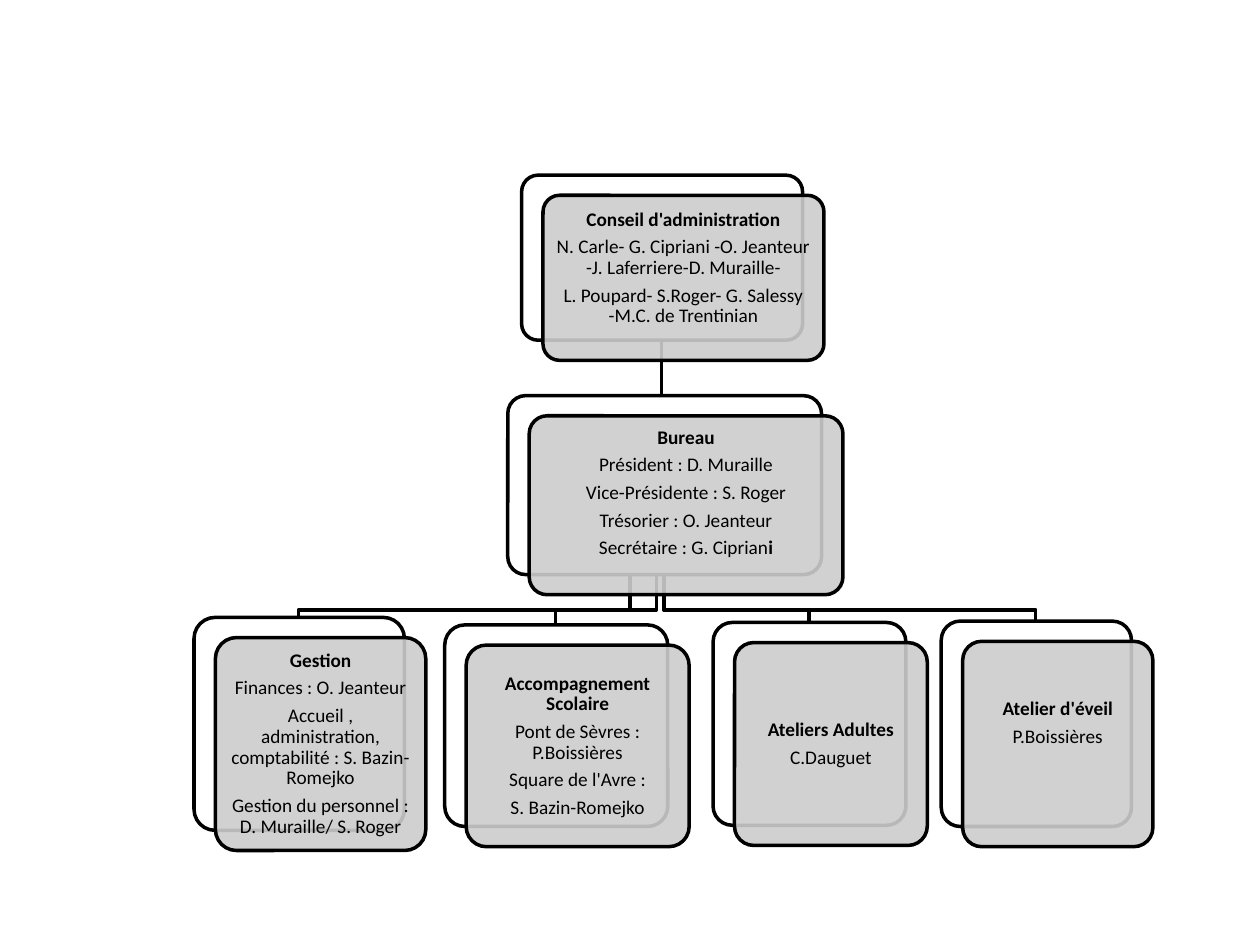
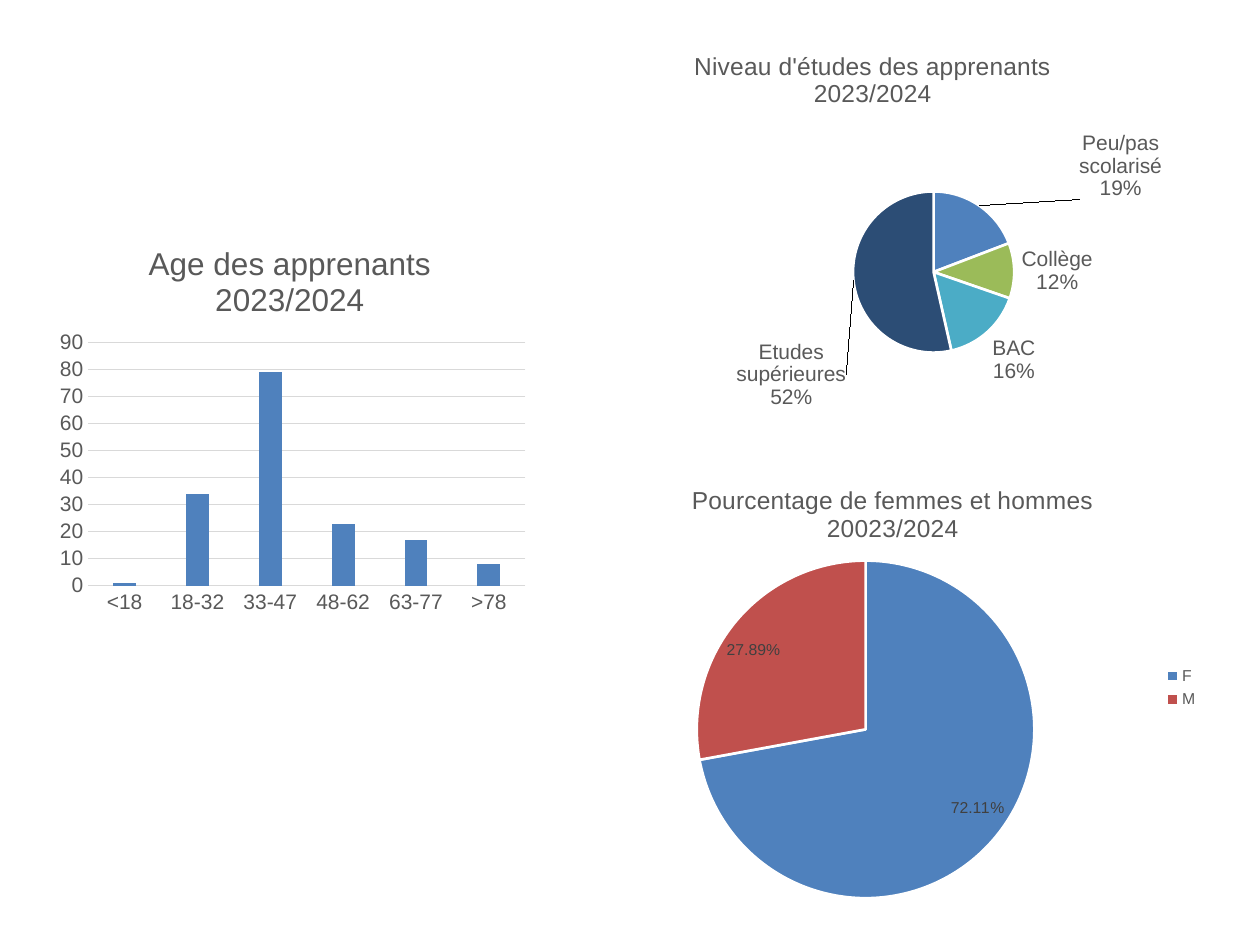
from lxml.etree import SubElement
from pptx import Presentation
from pptx.chart.data import CategoryChartData
from pptx.dml.color import RGBColor
from pptx.enum.chart import XL_CHART_TYPE, XL_LABEL_POSITION, XL_LEGEND_POSITION, XL_TICK_MARK
from pptx.enum.shapes import MSO_CONNECTOR, MSO_SHAPE
from pptx.enum.text import MSO_ANCHOR, PP_ALIGN
from pptx.oxml import parse_xml
from pptx.oxml.ns import nsdecls, qn
from pptx.util import Emu, Pt

SCALE = 9144  # EMU per px, 100 px to the inch
COLORS = {
    "black": "000000", "white": "FFFFFF", "card": "CCCCCC",
    "text": "595959", "label": "404040", "grid": "D9D9D9",
    "blue": "4F81BD", "green": "9BBB59", "teal": "4BACC6", "navy": "2C4D75", "red": "C0504D",
}
CARD_FONT, CHART_FONT = "Calibri", "Arial"

# Organisation chart: box of the back card, then the text of the front card.
# "tail" is the free room kept below the text.
BOARD = {"box": (414, 139, 223, 131), "tail": 15, "lines": [
    "Conseil d'administration",
    "N. Carle- G. Cipriani -O. Jeanteur -J. Laferriere-D. Muraille-",
    "L. Poupard- S.Roger- G. Salessy -M.C. de Trentinian"]}
OFFICE = {"box": (403, 314, 249, 142), "tail": 19, "lines": [
    "Bureau", "Président : D. Muraille", "Vice-Présidente : S. Roger",
    "Trésorier : O. Jeanteur", "Secrétaire : G. Ciprian"], "bold_end": "i"}
TEAMS = [
    {"box": (154, 490, 167, 169), "stem": 500, "lines": [
        "Gestion", "Finances : O. Jeanteur",
        "Accueil , administration, comptabilité : S. Bazin-Romejko",
        "Gestion du personnel : D. Muraille/ S. Roger"]},
    {"box": (353, 496, 177, 160), "stem": 521, "lines": [
        "Accompagnement Scolaire", "Pont de Sèvres : P.Boissières",
        "Square de l'Avre :", "S. Bazin-Romejko"]},
    {"box": (566, 494, 153, 161), "stem": 527, "lines": ["Ateliers Adultes", "C.Dauguet"]},
    {"box": (747, 493, 151, 163), "stem": 527, "tail": 33,
     "lines": ["Atelier d'éveil", "P.Boissières"]},
]
ELBOW_Y = 484
FRONT_OFFSET = (17, 16)
CARD_INSET = 5


def px(*values):
    return [Emu(value * SCALE) for value in values]


def color(name):
    return RGBColor.from_string(COLORS[name])


def set_font(font, size, name, family, bold=False):
    font.size, font.name, font.bold = Pt(size), family, bold
    font.color.rgb = color(name)


def set_line(line, name="black", width=2):
    line.color.rgb = color(name)
    line.width = Pt(width)


def add_card(slide, box, fill):
    shape = slide.shapes.add_shape(MSO_SHAPE.ROUNDED_RECTANGLE, *px(*box))
    shape.adjustments[0] = 0.1
    shape.shadow.inherit = False
    shape.fill.solid()
    shape.fill.fore_color.rgb = color(fill)
    set_line(shape.line)
    return shape


def add_unit(slide, unit):
    """Add a white back card and a translucent front card that holds the text."""
    left, top, width, height = unit["box"]
    add_card(slide, unit["box"], "white")
    front = add_card(slide, (left + FRONT_OFFSET[0], top + FRONT_OFFSET[1], width, height), "card")
    fill_color = front.fill._xPr.find(qn("a:solidFill"))[0]
    SubElement(fill_color, qn("a:alpha"), val="90000")

    frame = front.text_frame
    frame.word_wrap = True
    frame.vertical_anchor = MSO_ANCHOR.MIDDLE
    frame.margin_left = frame.margin_right = frame.margin_top = px(CARD_INSET)[0]
    frame.margin_bottom = px(CARD_INSET + unit.get("tail", 0))[0]
    for index, text in enumerate(unit["lines"]):
        paragraph = frame.add_paragraph() if index else frame.paragraphs[0]
        paragraph.alignment = PP_ALIGN.CENTER
        paragraph.line_spacing = 0.9
        paragraph.space_after = Pt(3.85)
        add_card_run(paragraph, text, bold=index == 0)
    if "bold_end" in unit:
        add_card_run(paragraph, unit["bold_end"], bold=True)


def add_card_run(paragraph, text, bold):
    run = paragraph.add_run()
    run.text = text
    set_font(run.font, 11, "black", CARD_FONT, bold)


def add_branch(slide, team):
    """Add the elbow line from the office card to the top of a team card."""
    left, top, width, _ = team["box"]
    _, office_top, _, office_height = OFFICE["box"]
    end_x = left + width // 2
    builder = slide.shapes.build_freeform(team["stem"], office_top + office_height, scale=SCALE)
    builder.add_line_segments(
        [(team["stem"], ELBOW_Y), (end_x, ELBOW_Y), (end_x, top)], close=False)
    branch = builder.convert_to_shape()
    branch.shadow.inherit = False
    branch.fill.background()
    set_line(branch.line)


def add_trunk(slide):
    """Add the straight line from the board to the office."""
    left, top, width, height = BOARD["box"]
    middle = left + width // 2
    trunk = slide.shapes.add_connector(
        MSO_CONNECTOR.STRAIGHT, *px(middle, top + height, middle, OFFICE["box"][1]))
    SubElement(trunk._element.spPr, qn("a:effectLst"))
    set_line(trunk.line)
    trunk._element.spPr.append(trunk._element.spPr.find(qn("a:effectLst")))


def build_organisation_slide(slide):
    for team in reversed(TEAMS):
        add_branch(slide, team)
    add_trunk(slide)
    for unit in [BOARD, OFFICE, *TEAMS]:
        add_unit(slide, unit)


def set_layout(parent, index, inner=False, **fractions):
    """Put a manual layout at the given place among the children of a chart part."""
    for layout in parent.findall(qn("c:layout")):
        parent.remove(layout)
    target = '<c:layoutTarget val="inner"/>' if inner else ""
    modes = ""
    if parent.tag != qn("c:dLbl"):
        modes = '<c:xMode val="edge"/><c:yMode val="edge"/>'
    values = "".join(f'<c:{key} val="{value:.4f}"/>' for key, value in fractions.items())
    parent.insert(index, parse_xml(
        f'<c:layout {nsdecls("c")}><c:manualLayout>{target}{modes}{values}'
        f"</c:manualLayout></c:layout>"))


def add_titled_chart(slide, kind, box, plot_box, title, title_at, title_size,
                     categories, values, number_format="General"):
    left, top, width, height = box
    data = CategoryChartData(number_format=number_format)
    data.categories = categories
    data.add_series("Series 1", values)
    chart = slide.shapes.add_chart(kind, *px(*box), data).chart
    set_font(chart.font, 10, "black", CHART_FONT)
    chart.has_legend = False

    frame = chart.chart_title.text_frame
    for index, text in enumerate(title):
        paragraph = frame.add_paragraph() if index else frame.paragraphs[0]
        run = paragraph.add_run()
        run.text = text
        set_font(run.font, title_size, "text", CHART_FONT)
    chart.chart_title.include_in_layout = False

    root = chart._chartSpace.chart
    set_layout(root.find(qn("c:title")), 1,
               x=(title_at[0] - left) / width, y=(title_at[1] - top) / height)
    set_layout(root.plotArea, 0, inner=True,
               x=(plot_box[0] - left) / width, y=(plot_box[1] - top) / height,
               w=plot_box[2] / width, h=plot_box[3] / height)
    return chart


def color_slices(chart, names):
    chart.plots[0].vary_by_categories = True
    for index, name in enumerate(names):
        slice_format = chart.series[0].points[index].format
        slice_format.fill.solid()
        slice_format.fill.fore_color.rgb = color(name)
        set_line(slice_format.line, "white", 1.5)


def add_level_pie(slide, box):
    left, top, width, height = box
    categories = ["Peu/pas scolarisé", "Collège", "BAC", "Etudes supérieures"]
    chart = add_titled_chart(
        slide, XL_CHART_TYPE.PIE, box, (left + 225, top + 129, 128, 128),
        ["Niveau d'études des apprenants", "2023/2024"], (left + 96, top + 14), 14,
        categories, [19, 11, 16, 53])
    color_slices(chart, ["blue", "green", "teal", "navy"])
    shares = ["19%", "12%", "16%", "52%"]
    moves = [(76, 0), (0, 0), (0, 0), (0, 74)]
    for index, (category, share, move) in enumerate(zip(categories, shares, moves)):
        label = chart.series[0].points[index].data_label
        label.position = XL_LABEL_POSITION.OUTSIDE_END
        frame = label.text_frame
        for paragraph, text in ((frame.paragraphs[0], category), (frame.add_paragraph(), share)):
            run = paragraph.add_run()
            run.text = text
            set_font(run.font, 12, "text", CHART_FONT)
        if any(move):
            set_layout(chart._chartSpace.xpath(".//c:dLbl")[index], 1,
                       x=move[0] / width, y=move[1] / height)


def add_age_columns(slide, box):
    left, top, _, _ = box
    chart = add_titled_chart(
        slide, XL_CHART_TYPE.COLUMN_CLUSTERED, box, (left + 30, top + 101, 347, 193),
        ["Age des apprenants", "2023/2024"], (left + 75, top + 20), 18,
        ["<18", "18-32", "33-47", "48-62", "63-77", ">78"], [1, 34, 79, 23, 17, 8])
    plot = chart.plots[0]
    plot.vary_by_categories = False
    plot.gap_width, plot.overlap = 219, -27
    fill = chart.series[0].format.fill
    fill.solid()
    fill.fore_color.rgb = color("blue")
    for axis in (chart.category_axis, chart.value_axis):
        axis.major_tick_mark = axis.minor_tick_mark = XL_TICK_MARK.NONE
        set_font(axis.tick_labels.font, 12, "text", CHART_FONT)
    set_line(chart.category_axis.format.line, "grid", 0.75)
    value_axis = chart.value_axis
    value_axis.minimum_scale, value_axis.maximum_scale, value_axis.major_unit = 0, 90, 10
    value_axis.format.line.fill.background()
    set_line(value_axis.major_gridlines.format.line, "grid", 0.75)


def add_gender_pie(slide, box):
    left, top, _, _ = box
    chart = add_titled_chart(
        slide, XL_CHART_TYPE.PIE, box, (left + 101, top + 80, 268, 268),
        ["Pourcentage de femmes et hommes", "20023/2024"], (left + 94, top + 17), 14,
        ["F", "M"], [0.7211, 0.2789], "0.00%")
    color_slices(chart, ["blue", "red"])
    chart.has_legend = True
    chart.legend.position = XL_LEGEND_POSITION.RIGHT
    chart.legend.include_in_layout = False
    set_font(chart.legend.font, 9, "text", CHART_FONT)
    labels = chart.series[0].data_labels
    labels.show_value = True
    labels.show_percentage = False
    labels.number_format, labels.number_format_is_linked = "0.00%", False
    labels.position = XL_LABEL_POSITION.BEST_FIT
    set_font(labels.font, 9, "label", CHART_FONT)


def build_learners_slide(slide):
    add_level_pie(slide, (452, 23, 548, 301))
    add_age_columns(slide, (40, 171, 385, 322))
    add_gender_pie(slide, (452, 365, 509, 362))


def main():
    presentation = Presentation()
    presentation.slide_width, presentation.slide_height = px(1000, 750)
    for build in (build_organisation_slide, build_learners_slide):
        build(presentation.slides.add_slide(presentation.slide_layouts[6]))
    presentation.save("out.pptx")


if __name__ == "__main__":
    main()
